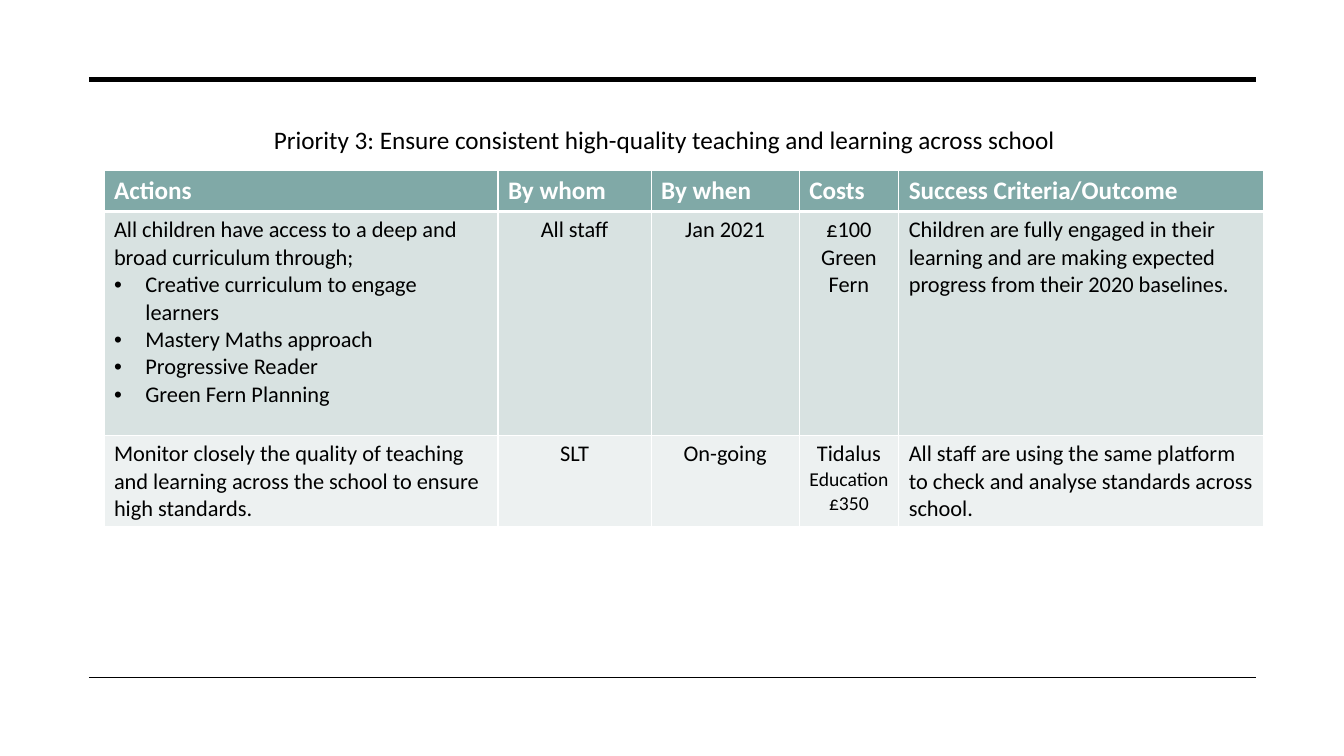
from lxml import etree
from pptx import Presentation
from pptx import util as u
from pptx.dml.color import RGBColor
from pptx.enum import shapes, text
from pptx.oxml import ns

PRIORITY = "Priority 3: Ensure consistent high-quality teaching and learning across school"
COLUMNS = [
    ("Actions", 9.93, "left"),
    ("By whom", 3.86, "center"),
    ("By when", 3.73, "center"),
    ("Costs", 2.51, "center"),
    ("Success Criteria/Outcome", 9.19, "left"),
]
ACTIONS = [
    [
        [
            "All children have access to a deep and broad curriculum through;",
            {"bullet": "Creative curriculum to engage learners"},
            {"bullet": "Mastery Maths approach"},
            {"bullet": "Progressive Reader"},
            {"bullet": "Green Fern Planning"},
        ],
        ["All staff"],
        ["Jan 2021"],
        ["£100", "Green Fern"],
        ["Children are fully engaged in their learning and are making "
         "expected progress from their 2020 baselines."],
    ],
    [
        ["Monitor closely the quality of teaching and learning across "
         "the school to ensure high standards."],
        ["SLT"],
        ["On-going"],
        [[("Tidalus ", "body"), ("Education", "small")], [("£350", "small")]],
        ["All staff are using the same platform to check and analyse "
         "standards across school."],
    ],
]
ROW_HEIGHTS = [1.04, 5.64, 2.29]
RULES = [(2.01, 3.5), (17.07, 1)]
RULE_LEFT, RULE_RIGHT = 2.24, 31.65
TABLE_LEFT, TABLE_TOP = 2.62, 4.29

THEME = {
    "font": "Calibri",
    "ink": "000000",
    "paper": "FFFFFF",
    "rows": ["80A9A7", "D8E2E1", "EDF1F1"],
    "sizes": {"heading": 18, "body": 16, "small": 14},
    "border": 1,
    "header_border": 3,
    "bullet_indent": 0.79,
}


def colour(name):
    return RGBColor.from_string(THEME[name])


def add_run(paragraph, words, size, ink="ink", bold=False):
    run = paragraph.add_run()
    run.text = words
    run.font.name = THEME["font"]
    run.font.size = u.Pt(THEME["sizes"][size])
    run.font.color.rgb = colour(ink)
    run.font.bold = bold


def add_bullet(paragraph):
    properties = paragraph._p.get_or_add_pPr()
    indent = u.Cm(THEME["bullet_indent"])
    properties.set("marL", str(indent))
    properties.set("indent", str(-indent))
    etree.SubElement(properties, ns.qn("a:buFont"), typeface="Arial")
    etree.SubElement(properties, ns.qn("a:buChar"), char="•")


def add_borders(cell, row):
    properties = cell._tc.get_or_add_tcPr()
    thick_side = {0: "B", 1: "T"}.get(row)
    for place, side in enumerate("LRTB"):
        points = THEME["header_border" if side == thick_side else "border"]
        border = etree.Element(ns.qn(f"a:ln{side}"), w=str(u.Pt(points)))
        fill = etree.SubElement(border, ns.qn("a:solidFill"))
        etree.SubElement(fill, ns.qn("a:srgbClr"), val=THEME["paper"])
        properties.insert(place, border)


def fill_cell(cell, row, lines, align):
    cell.fill.solid()
    cell.fill.fore_color.rgb = RGBColor.from_string(THEME["rows"][row])
    add_borders(cell, row)
    frame = cell.text_frame
    for number, line in enumerate(lines):
        paragraph = frame.add_paragraph() if number else frame.paragraphs[0]
        if row == 0:
            add_run(paragraph, line, "heading", "paper", True)
            continue
        if align == "center":
            paragraph.alignment = text.PP_ALIGN.CENTER
        if isinstance(line, dict):
            add_bullet(paragraph)
            line = line["bullet"]
        runs = [(line, "body")] if isinstance(line, str) else line
        for words, size in runs:
            add_run(paragraph, words, size)


def add_rule(slide, top, weight):
    rule = slide.shapes.add_connector(
        shapes.MSO_CONNECTOR.STRAIGHT,
        u.Cm(RULE_LEFT), u.Cm(top), u.Cm(RULE_RIGHT), u.Cm(top))
    rule.line.color.rgb = colour("ink")
    rule.line.width = u.Pt(weight)
    etree.SubElement(rule._element.spPr, ns.qn("a:effectLst"))


def add_priority(slide):
    priority = slide.shapes.add_textbox(u.Cm(6.65), u.Cm(3), u.Cm(21.18), u.Cm(1.02))
    priority.text_frame.word_wrap = False
    priority.text_frame.auto_size = text.MSO_AUTO_SIZE.SHAPE_TO_FIT_TEXT
    add_run(priority.text_frame.paragraphs[0], PRIORITY, "heading")


def add_plan(slide):
    rows = [[[heading] for heading, _, _ in COLUMNS]] + ACTIONS
    width = sum(column[1] for column in COLUMNS)
    plan = slide.shapes.add_table(
        len(rows), len(COLUMNS), u.Cm(TABLE_LEFT), u.Cm(TABLE_TOP),
        u.Cm(width), u.Cm(sum(ROW_HEIGHTS))).table
    for index, (_, column_width, _) in enumerate(COLUMNS):
        plan.columns[index].width = u.Cm(column_width)
    for row, cells in enumerate(rows):
        plan.rows[row].height = u.Cm(ROW_HEIGHTS[row])
        for index, lines in enumerate(cells):
            fill_cell(plan.cell(row, index), row, lines, COLUMNS[index][2])


def main():
    deck = Presentation()
    deck.slide_width, deck.slide_height = u.Cm(33.87), u.Cm(19.05)
    slide = deck.slides.add_slide(deck.slide_layouts[6])
    slide.background.fill.solid()
    slide.background.fill.fore_color.rgb = colour("paper")
    for top, weight in RULES:
        add_rule(slide, top, weight)
    add_priority(slide)
    add_plan(slide)
    deck.save("out.pptx")


if __name__ == "__main__":
    main()
